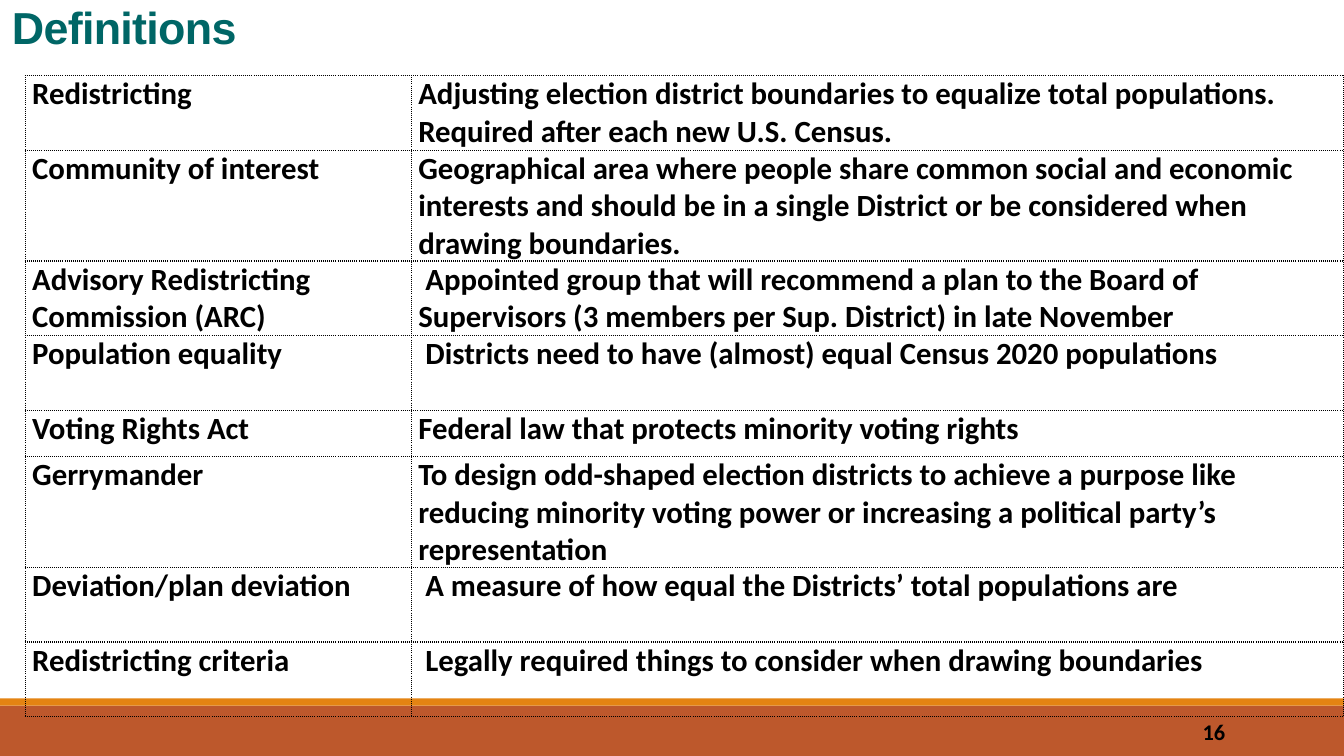
from lxml import etree
from pptx import Presentation
from pptx.dml.color import RGBColor
from pptx.enum.shapes import MSO_SHAPE
from pptx.enum.text import MSO_ANCHOR, PP_ALIGN
from pptx.oxml.ns import qn
from pptx.util import Inches, Pt

RECTANGLE = MSO_SHAPE.RECTANGLE
MIDDLE, BOTTOM = MSO_ANCHOR.MIDDLE, MSO_ANCHOR.BOTTOM
LEFT, RIGHT = PP_ALIGN.LEFT, PP_ALIGN.RIGHT

BLACK = RGBColor(0x00, 0x00, 0x00)
TEAL = RGBColor(0x00, 0x66, 0x66)
RUST = RGBColor(0xBD, 0x58, 0x2C)
ORANGE = RGBColor(0xE4, 0x83, 0x12)

SLIDE_WIDTH, SLIDE_HEIGHT = 13.33, 7.5
COLUMN_WIDTHS = [3.83, 9.25]
TABLE_LEFT, TABLE_TOP = 0.25, 0.75
LINE_INDENT = Inches(0.07)

# Term, definition, row height, whether the definition's first line is indented
DEFINITIONS = [
    ("Redistricting",
     "Adjusting election district boundaries to equalize total populations. "
     "Required after each new U.S. Census.", 0.74, False),
    ("Community of interest",
     "Geographical area where people share common social and economic interests "
     "and should be in a single District or be considered when drawing boundaries.",
     0.81, False),
    ("Advisory Redistricting Commission (ARC)",
     "Appointed group that will recommend a plan to the Board of Supervisors "
     "(3 members per Sup. District) in late November", 0.74, True),
    ("Population equality",
     "Districts need to have (almost) equal Census 2020 populations", 0.74, True),
    ("Voting Rights Act",
     "Federal law that protects minority voting rights", 0.46, False),
    ("Gerrymander",
     "To design odd-shaped election districts to achieve a purpose like reducing "
     "minority voting power or increasing a political party’s representation",
     0.74, False),
    ("Deviation/plan deviation",
     "A measure of how equal the Districts’ total populations are", 0.74, True),
    ("Redistricting criteria",
     "Legally required things to consider when drawing boundaries", 0.74, True),
]


def write_text(frame, text, font_name, size, color, alignment=LEFT):
    frame.word_wrap = True
    paragraph = frame.paragraphs[0]
    paragraph.text = text
    paragraph.alignment = alignment
    font = paragraph.font
    font.name, font.size, font.bold = font_name, Pt(size), True
    font.color.rgb = color
    return paragraph


def add_dotted_borders(cell):
    properties = cell._tc.get_or_add_tcPr()
    for side in ("lnL", "lnR", "lnT", "lnB"):
        line = etree.SubElement(properties, qn(f"a:{side}"), w=str(Pt(1)))
        fill = etree.SubElement(line, qn("a:solidFill"))
        etree.SubElement(fill, qn("a:srgbClr"), val=str(BLACK))
        etree.SubElement(line, qn("a:prstDash"), val="sysDot")


presentation = Presentation()
presentation.slide_width = Inches(SLIDE_WIDTH)
presentation.slide_height = Inches(SLIDE_HEIGHT)
slide = presentation.slides.add_slide(presentation.slide_layouts[6])

# Footer bands
for top, height, color in [(7, 0.5, RUST), (6.93, 0.07, ORANGE)]:
    band = slide.shapes.add_shape(
        RECTANGLE, 0, Inches(top), presentation.slide_width, Inches(height))
    band.shadow.inherit = False
    band.fill.solid()
    band.fill.fore_color.rgb = color
    band.line.fill.background()

# Title
title = slide.shapes.add_textbox(Inches(0.02), Inches(-0.25), Inches(11), Inches(0.83))
title.text_frame.vertical_anchor = BOTTOM
paragraph = write_text(title.text_frame, "Definitions", "Arial", 32, TEAL)
paragraph.line_spacing = 0.85
paragraph.runs[0].font._element.set("spc", "-50")

# Slide number
number = slide.shapes.add_textbox(Inches(10.82), Inches(7.06), Inches(1.43), Inches(0.4))
number.text_frame.vertical_anchor = MIDDLE
write_text(number.text_frame, "16", "Calibri", 16, BLACK, RIGHT)

# Definitions table
table = slide.shapes.add_table(
    len(DEFINITIONS), len(COLUMN_WIDTHS), Inches(TABLE_LEFT), Inches(TABLE_TOP),
    Inches(sum(COLUMN_WIDTHS)), Inches(sum(row[2] for row in DEFINITIONS))).table
table.first_row = table.horz_banding = False
for column, width in zip(table.columns, COLUMN_WIDTHS):
    column.width = Inches(width)

for row, (term, definition, height, indented) in zip(table.rows, DEFINITIONS):
    row.height = Inches(height)
    for cell, text in zip(row.cells, (term, definition)):
        cell.margin_left = cell.margin_right = Inches(0.07)
        cell.margin_top = cell.margin_bottom = 0
        add_dotted_borders(cell)
        cell.fill.background()
        paragraph = write_text(cell.text_frame, text, "Calibri", 22, BLACK)
        paragraph.space_after = Pt(8)
        if indented and text == definition:
            paragraph._p.get_or_add_pPr().set("indent", str(LINE_INDENT))

presentation.save("out.pptx")
